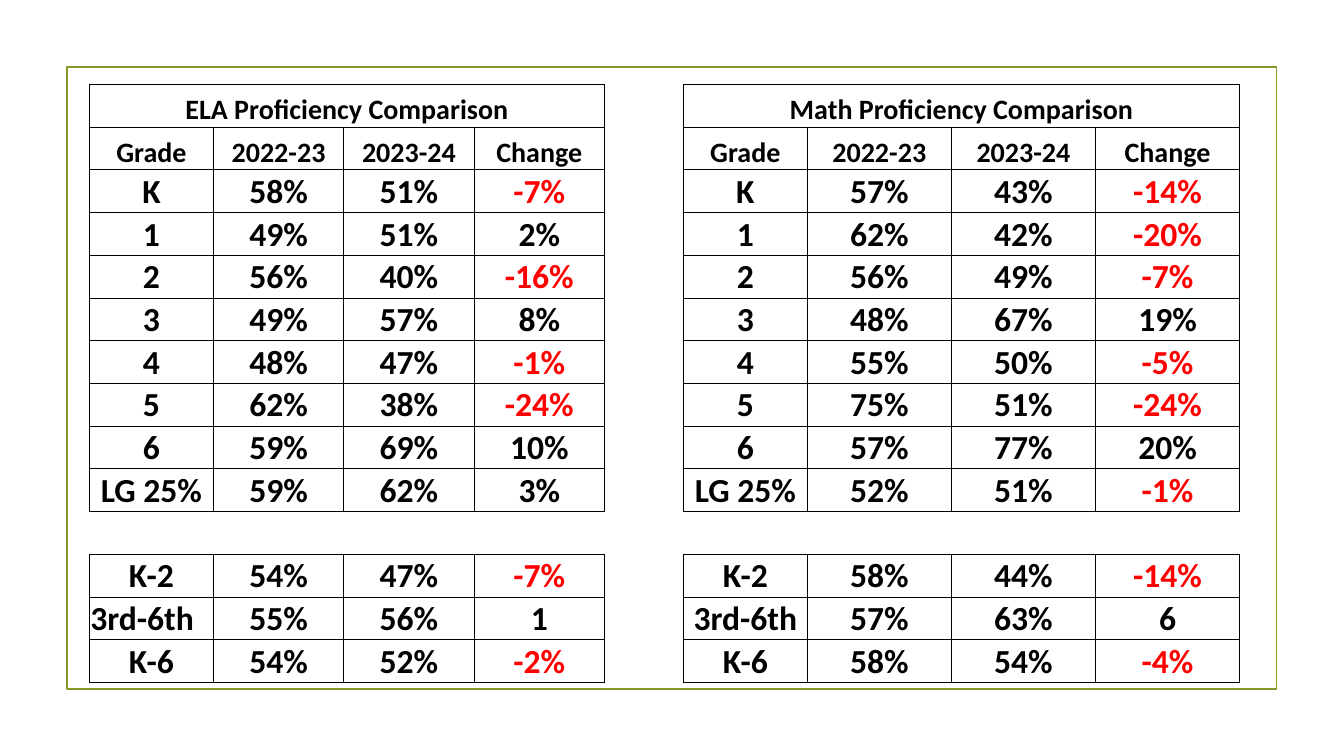
import pptx
import pptx.dml.color
import pptx.enum.shapes
import pptx.enum.text
import pptx.oxml
import pptx.oxml.ns
import pptx.util
from dataclasses import dataclass

Pt = pptx.util.Pt
RGB = pptx.dml.color.RGBColor
ALIGN = pptx.enum.text.PP_ALIGN


@dataclass(frozen=True)
class Theme:
    font: str = "Calibri"
    ink: str = "000000"
    loss: str = "FF0000"
    frame: str = "83992A"
    head: float = 20
    body: float = 24
    frame_line: float = 1.25
    cell_line: float = 0.5


T = Theme()
NO_GRID = "{2D5ABB26-0587-4C30-8999-92F81FD0307C}"
ROW_HEIGHT = 30.55
GAP_WIDTH = 56.4
HEADINGS = ["Grade", "2022-23", "2023-24", "Change"]
ELA = [
    ["K", "58%", "51%", "-7%"],
    ["1", "49%", "51%", "2%"],
    ["2", "56%", "40%", "-16%"],
    ["3", "49%", "57%", "8%"],
    ["4", "48%", "47%", "-1%"],
    ["5", "62%", "38%", "-24%"],
    ["6", "59%", "69%", "10%"],
    ["LG 25%", "59%", "62%", "3%"],
    [],
    ["K-2", "54%", "47%", "-7%"],
    ["3rd-6th", "55%", "56%", "1"],
    ["K-6", "54%", "52%", "-2%"],
]
MATH = [
    ["K", "57%", "43%", "-14%"],
    ["1", "62%", "42%", "-20%"],
    ["2", "56%", "49%", "-7%"],
    ["3", "48%", "67%", "19%"],
    ["4", "55%", "50%", "-5%"],
    ["5", "75%", "51%", "-24%"],
    ["6", "57%", "77%", "20%"],
    ["LG 25%", "52%", "51%", "-1%"],
    [],
    ["K-2", "58%", "44%", "-14%"],
    ["3rd-6th", "57%", "63%", "6"],
    ["K-6", "58%", "54%", "-4%"],
]


def write(tf, text, size=T.body, color=T.ink, bold=True, align=ALIGN.CENTER):
    p = tf.paragraphs[0]
    p.alignment = align
    r = p.add_run()
    r.text = text
    r.font.name = T.font
    r.font.size = Pt(size)
    r.font.bold = bold
    r.font.color.rgb = RGB.from_string(color)


def outline(cell):
    tcPr = cell._tc.get_or_add_tcPr()
    for i, side in enumerate("LRTB"):
        tcPr.insert(i, pptx.oxml.parse_xml(
            f'<a:ln{side} {pptx.oxml.ns.nsdecls("a")} w="{Pt(T.cell_line)}">'
            f'<a:solidFill><a:srgbClr val="{T.ink}"/></a:solidFill></a:ln{side}>'))


def add_frame(s, x, y, w, h):
    sp = s.shapes.add_shape(pptx.enum.shapes.MSO_SHAPE.RECTANGLE, Pt(x), Pt(y), Pt(w), Pt(h))
    sp.shadow.inherit = False
    sp.fill.background()
    sp.line.color.rgb = RGB.from_string(T.frame)
    sp.line.width = Pt(T.frame_line)


def fill_subject(tbl, left, title, scores, aligns):
    rows = [[title, "", "", ""], HEADINGS] + scores
    for i, row in enumerate(rows):
        for j, text in enumerate(row):
            cell = tbl.cell(i, left + j)
            outline(cell)
            if text:
                write(cell.text_frame, text,
                      size=T.head if i < 2 else T.body,
                      color=T.loss if text.startswith("-") else T.ink,
                      align=aligns.get(text, ALIGN.CENTER))
    tbl.cell(0, left).merge(tbl.cell(0, left + 3))


def add_scores(s, x, y):
    widths = [88.6] + [93.1] * 3 + [GAP_WIDTH, 88.6] + [102.9] * 3
    n = len(ELA) + 2
    tbl = s.shapes.add_table(n, len(widths), Pt(x), Pt(y),
                             Pt(sum(widths)), Pt(n * ROW_HEIGHT)).table
    tbl.first_row = tbl.horz_banding = False
    tbl._tbl.tblPr.find(pptx.oxml.ns.qn("a:tableStyleId")).text = NO_GRID
    for col, width in zip(tbl.columns, widths):
        col.width = Pt(width)
    for row in tbl.rows:
        row.height = Pt(ROW_HEIGHT)
        for cell in row.cells:
            cell.fill.background()
            cell.vertical_anchor = pptx.enum.text.MSO_ANCHOR.BOTTOM
            cell.margin_left = cell.margin_right = cell.margin_top = Pt(0.7)
            cell.margin_bottom = 0
    fill_subject(tbl, 0, "ELA Proficiency Comparison", ELA, {"3rd-6th": ALIGN.LEFT})
    fill_subject(tbl, 5, "Math Proficiency Comparison", MATH, {})


def main():
    prs = pptx.Presentation()
    prs.slide_width, prs.slide_height = Pt(960), Pt(540)
    s = prs.slides.add_slide(prs.slide_layouts[6])
    add_frame(s, 47.8, 48, 864, 444)
    add_scores(s, 63.9, 60.1)
    prs.save("out.pptx")


if __name__ == "__main__":
    main()
